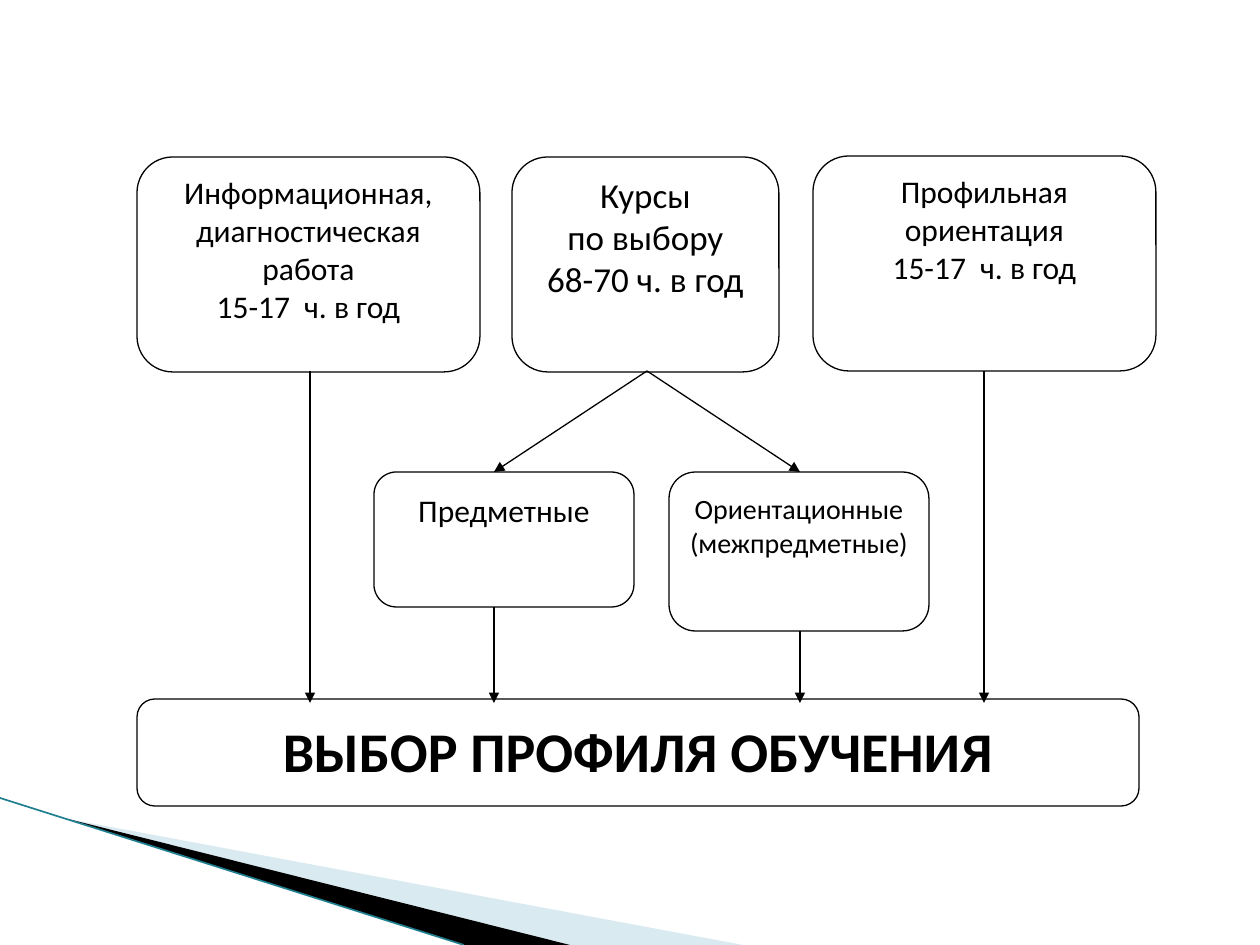
from lxml.etree import SubElement
from pptx import Presentation
from pptx.dml.color import RGBColor
from pptx.enum.shapes import MSO_CONNECTOR as Connector, MSO_SHAPE as Shape
from pptx.enum.text import MSO_ANCHOR as Anchor, PP_ALIGN as Align
from pptx.oxml.ns import qn
from pptx.util import Pt

SCALE = 914400 / 126
WIDTH, HEIGHT = 1260, 945
FONT = "Calibri"
BLACK, WHITE = "000000", "FFFFFF"
PALE_BLUE, TEAL = "D9EAF1", "1F7F8F"


def px(value):
    return round(value * SCALE)


def color(value):
    return RGBColor.from_string(value)


def add_wedge(page, points, fill):
    builder = page.shapes.build_freeform(*points[0], scale=SCALE)
    builder.add_line_segments(points[1:], close=True)
    wedge = builder.convert_to_shape()
    wedge.shadow.inherit = False
    wedge.fill.solid()
    wedge.fill.fore_color.rgb = color(fill)
    wedge.line.fill.background()


def add_line(page, start, end, line_color=BLACK, width=0.75, arrow=True):
    line = page.shapes.add_connector(
        Connector.STRAIGHT, *map(px, (*start, *end)))
    line.line.color.rgb = color(line_color)
    line.line.width = Pt(width)
    properties = line._element.spPr
    if arrow:
        SubElement(properties.find(qn("a:ln")), qn("a:tailEnd"), type="triangle")
    SubElement(properties, qn("a:effectLst"))


def add_box(page, area, lines, size, insets=(11, 6), bold=False):
    """Draw a rounded box; insets are the side and the top margin."""
    box = page.shapes.add_shape(Shape.ROUNDED_RECTANGLE, *map(px, area))
    box.shadow.inherit = False
    box.fill.solid()
    box.fill.fore_color.rgb = color(WHITE)
    box.line.color.rgb = color(BLACK)
    box.line.width = Pt(0.75)
    frame = box.text_frame
    frame.word_wrap = True
    frame.vertical_anchor = Anchor.TOP
    side, top = map(px, insets)
    frame.margin_left = frame.margin_right = side
    frame.margin_top = frame.margin_bottom = top
    for index, text in enumerate(lines):
        para = frame.paragraphs[0] if index == 0 else frame.add_paragraph()
        para.alignment = Align.CENTER
        span = para.add_run()
        span.text = text
        span.font.name = FONT
        span.font.size = Pt(size)
        span.font.bold = bold
        span.font.color.rgb = color(BLACK)


def add_corner(page, left, top, bottom):
    """Draw the pointed stripes that run from the left edge to the bottom."""
    tip = (left + 68, top + 21)
    add_wedge(page, [tip, (left + 743, bottom), (left + 570, bottom)], PALE_BLUE)
    add_wedge(page, [tip, (left + 570, bottom), (left + 464, bottom)], BLACK)
    add_line(page, (left, top), (left + 464, bottom), TEAL, 0.95, arrow=False)


def add_scheme(page, left, top):
    """Draw the three kinds of work, the two kinds of course and the result."""
    def place(x, y, width, height):
        return left + x, top + y, width, height

    def link(start, end):
        add_line(page, (left + start[0], top + start[1]),
                 (left + end[0], top + end[1]))

    hours = "15-17  ч. в год"
    add_box(page, place(0, 1, 343, 215),
            ["Информационная, диагностическая работа", hours], 18)
    add_box(page, place(375, 1, 267, 215),
            ["Курсы", "по выбору", "68-70 ч. в год"], 20)
    add_box(page, place(676, 0, 343, 215), ["Профильная ориентация", hours], 18)

    turned = (6, 12)
    add_box(page, place(237, 316, 260, 135), ["Предметные"], 18, turned)
    add_box(page, place(532, 316, 260, 159),
            ["Ориентационные (межпредметные)"], 16, turned)
    add_box(page, place(0, 543, 1002, 107),
            ["ВЫБОР ПРОФИЛЯ ОБУЧЕНИЯ"], 32, turned, bold=True)

    source_bottom, result_top = 215, 547
    for x, course_bottom in ((357, 451), (663, 475)):
        link((510, source_bottom), (x, 316))
        link((x, course_bottom), (x, result_top))
    for x in (173, 847):
        link((x, source_bottom), (x, result_top))


def main():
    deck = Presentation()
    deck.slide_width, deck.slide_height = px(WIDTH), px(HEIGHT)
    page = deck.slides.add_slide(deck.slide_layouts[6])
    add_corner(page, 0, 798, HEIGHT)
    add_scheme(page, 137, 156)
    deck.save("out.pptx")


if __name__ == "__main__":
    main()
